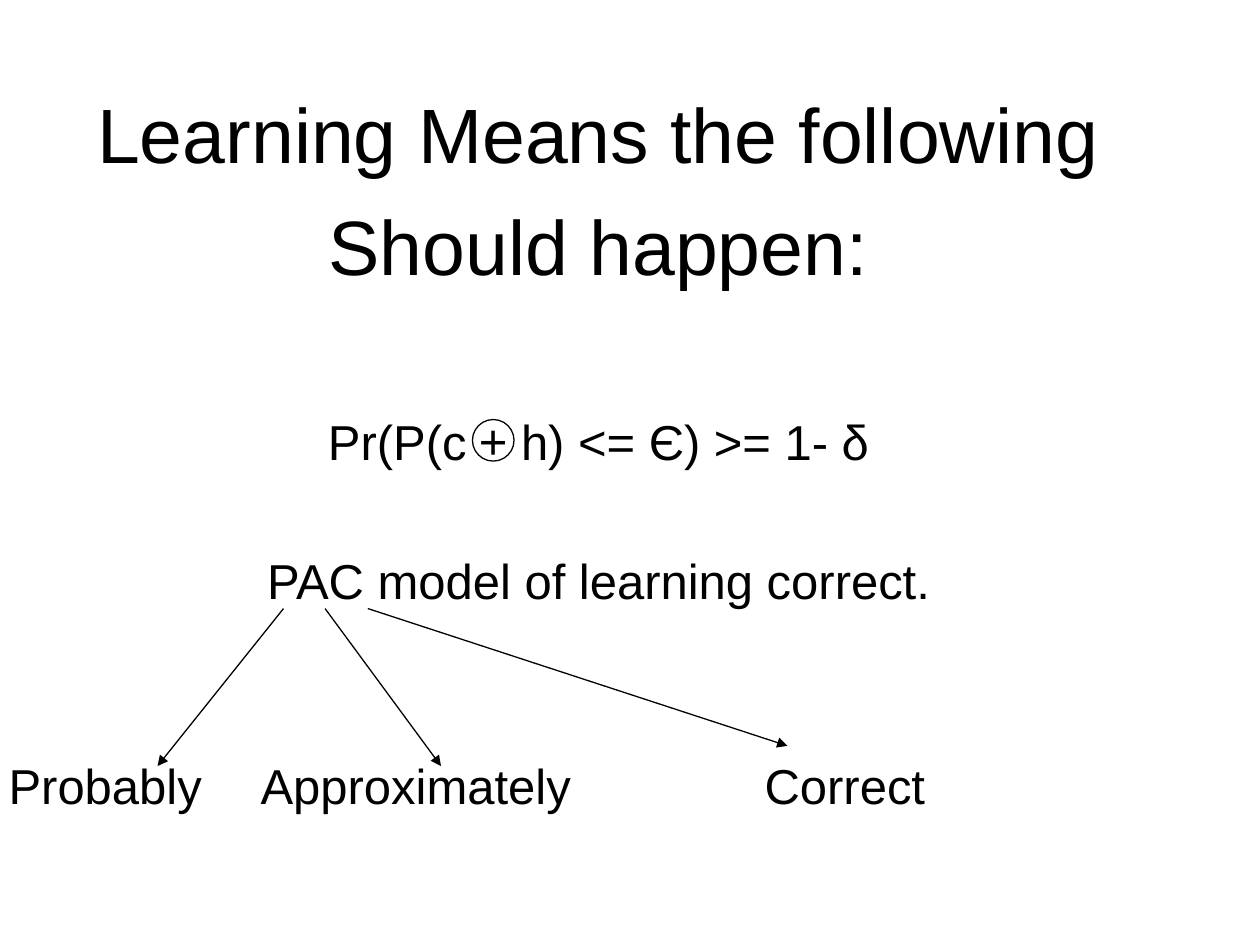
from lxml import etree
from pptx import Presentation
from pptx.dml.color import RGBColor
from pptx.enum.shapes import MSO_CONNECTOR, MSO_SHAPE
from pptx.enum.text import MSO_ANCHOR, PP_ALIGN
from pptx.oxml.ns import qn
from pptx.util import Inches, Pt

BLACK = "000000"


def color(hex_code):
    return RGBColor.from_string(hex_code)


def write(para, text, size=28, align=PP_ALIGN.CENTER, before=0, track=0):
    """Add one run; track widens the space after each letter, in points."""
    para.alignment = align
    para.space_before = Pt(before)
    run = para.add_run()
    run.text = text
    run.font.name = "Arial"
    run.font.size = Pt(size)
    run.font.color.rgb = color(BLACK)
    if track:
        run.font._element.set("spc", str(round(track * 100)))


def add_box(slide, box, wrap=True):
    frame = slide.shapes.add_textbox(*map(Inches, box)).text_frame
    frame.word_wrap = wrap
    return frame


def add_body(slide, box):
    """Heading, formula and model name, one paragraph each."""
    frame = add_box(slide, box)
    frame.margin_top = Inches(0.11)
    # Each line: pieces of (text, tracking), size, space before
    lines = [
        ([("Learning Means the following", 0)], 44, 0),
        ([("Should happen:", 0)], 44, 11),
        # The wide space leaves room for the circled plus
        ([("Pr(P(c", 0), (" ", 23.35), ("h) <= Є) >= 1- δ", 0)], 28, 69),
        ([("PAC model of learning correct.", 0)], 28, 46),
    ]
    for i, (parts, size, before) in enumerate(lines):
        para = frame.add_paragraph() if i else frame.paragraphs[0]
        for text, track in parts:
            write(para, text, size=size, before=before, track=track)


def add_plus(slide, box):
    """Circled plus sign inside the formula."""
    ring = slide.shapes.add_shape(MSO_SHAPE.OVAL, *map(Inches, box))
    ring.shadow.inherit = False
    ring.fill.background()
    ring.line.color.rgb = color(BLACK)
    ring.line.width = Pt(0.75)
    frame = ring.text_frame
    frame.word_wrap = False
    frame.vertical_anchor = MSO_ANCHOR.MIDDLE
    write(frame.paragraphs[0], "+")


def add_words(slide, box, stops):
    """Row of words set on tab stops, in inches from the text edge."""
    para = add_box(slide, box, wrap=False).paragraphs[0]
    write(para, "Probably\tApproximately\tCorrect", align=PP_ALIGN.LEFT)
    tabs = etree.SubElement(para._p.get_or_add_pPr(), qn("a:tabLst"))
    for stop in stops:
        etree.SubElement(tabs, qn("a:tab"), pos=str(Inches(stop)), algn="l")


def add_arrow(slide, start, end):
    link = slide.shapes.add_connector(
        MSO_CONNECTOR.STRAIGHT, *map(Inches, start + end))
    link.line.color.rgb = color(BLACK)
    link.line.width = Pt(0.75)
    etree.SubElement(link.line._get_or_add_ln(), qn("a:tailEnd"), type="triangle")
    etree.SubElement(link._element.spPr, qn("a:effectLst"))


def main():
    deck = Presentation()
    deck.slide_width, deck.slide_height = Inches(10), Inches(7.5)
    slide = deck.slides.add_slide(deck.slide_layouts[6])

    add_body(slide, (0.5, 0.58, 8.5, 4.92))
    add_plus(slide, (3.75, 3.33, 0.33, 0.33))
    add_words(slide, (-0.03, 5.95, 7.48, 0.57), stops=(2, 6))

    # Arrows from the letters P, A, C to their words
    ends = [(1.25, 6.08), (3.5, 6.08), (6.25, 5.92)]
    for left, end in zip((2.25, 2.58, 2.92), ends):
        add_arrow(slide, (left, 4.83), end)

    deck.save("out.pptx")


if __name__ == "__main__":
    main()
